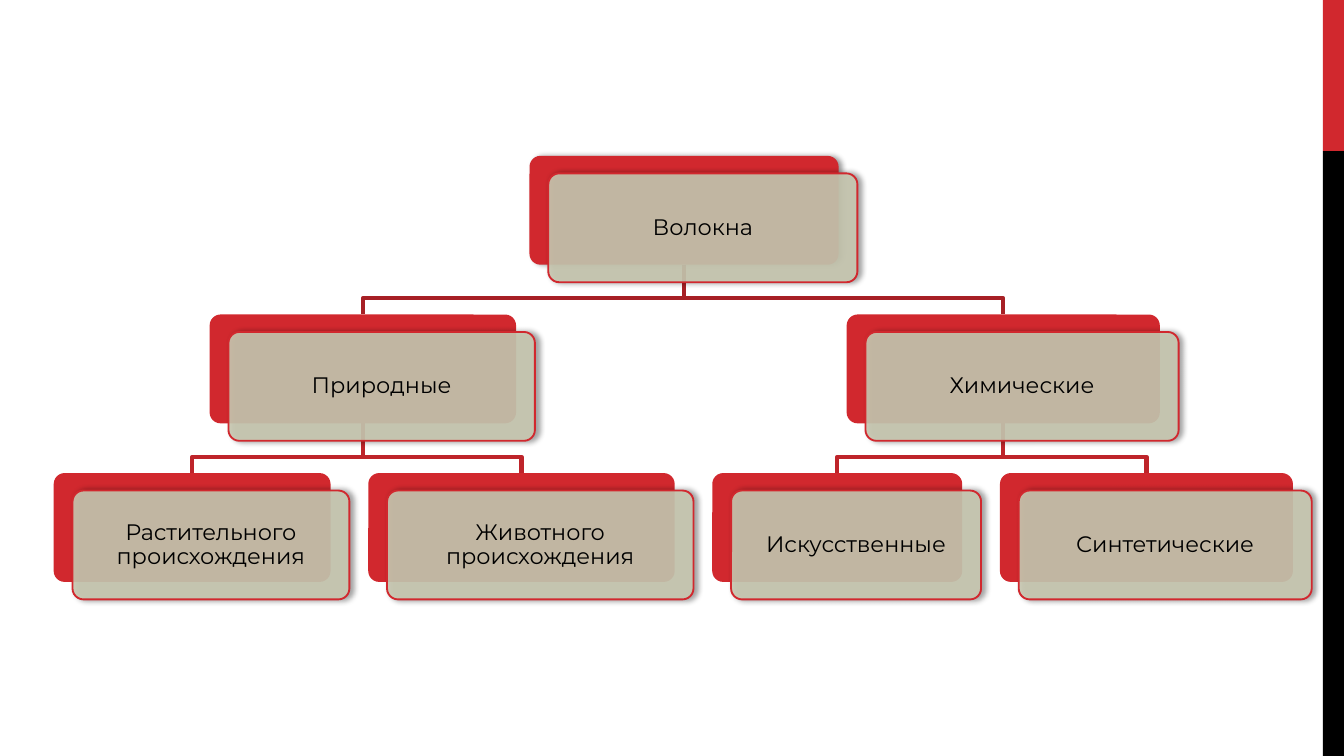
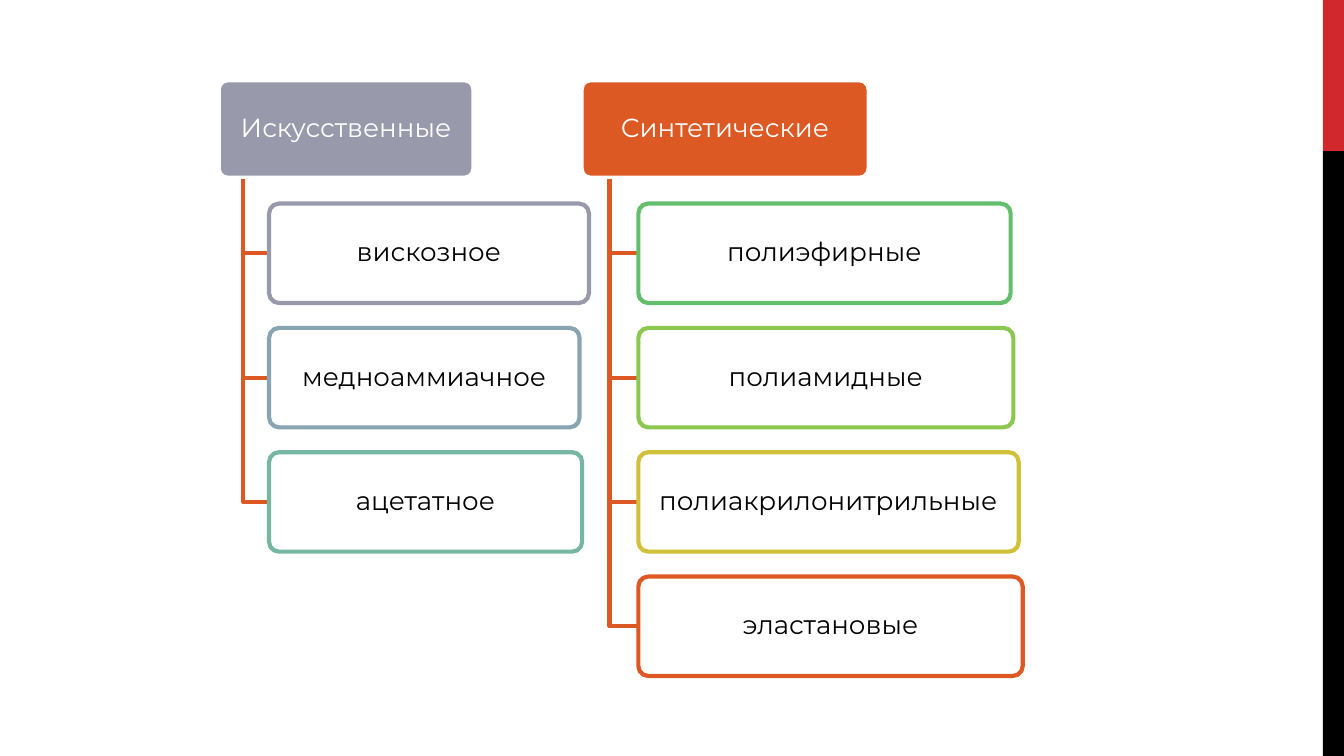
from dataclasses import dataclass

from lxml import etree
from pptx import Presentation
from pptx.dml.color import RGBColor
from pptx.enum.shapes import MSO_SHAPE
from pptx.enum.text import MSO_ANCHOR, PP_ALIGN
from pptx.oxml import parse_xml
from pptx.oxml.ns import nsdecls, qn
from pptx.util import Inches, Pt

RECTANGLE = MSO_SHAPE.RECTANGLE
ROUNDED = MSO_SHAPE.ROUNDED_RECTANGLE
CENTER = PP_ALIGN.CENTER
MIDDLE = MSO_ANCHOR.MIDDLE

SLIDE_WIDTH = 10
SLIDE_HEIGHT = SLIDE_WIDTH * 9 / 16
BLANK_LAYOUT = 6


@dataclass(frozen=True)
class Theme:
    font: str = "Montserrat"
    red: str = "D1282E"
    black: str = "000000"
    white: str = "FFFFFF"
    sand: str = "C8C8B1"
    orange: str = "DC5924"
    gray: str = "989AAC"
    tree_lines: tuple = ("A72025", "BE242A")
    tree_size: float = 12
    list_size: float = 14
    thin: float = 1
    medium: float = 2.25
    thick: float = 3.25
    opacity: int = 90


THEME = Theme()


@dataclass(frozen=True)
class Node:
    text: str
    left: float
    width: float
    children: tuple = ()

    @property
    def center(self):
        return self.left + self.width / 2


FIBER_TREE = Node("Волокна", 3.94, 2.3, (
    Node("Природные", 1.56, 2.28, (
        Node("Растительного происхождения", 0.4, 2.06),
        Node("Животного происхождения", 2.74, 2.28),
    )),
    Node("Химические", 6.3, 2.33, (
        Node("Искусственные", 5.3, 1.86),
        Node("Синтетические", 7.44, 2.18),
    )),
))
TREE_TOP, TREE_STEP, PLATE_HEIGHT = 1.16, 1.18, 0.81
CARD_SHIFT, CARD_DROP, BEND_GAP = 0.14, 0.13, 0.12

# Heading, left, width, colour, then items as (text, width, outline colour).
BRANCHES = (
    ("Искусственные", 1.62, 1.91, THEME.gray, (
        ("вискозное", 2.38, THEME.gray),
        ("медноаммиачное", 2.31, "88A5B1"),
        ("ацетатное", 2.33, "76B7A3"),
    )),
    ("Синтетические", 4.32, 2.15, THEME.orange, (
        ("полиэфирные", 2.77, "63BF6C"),
        ("полиамидные", 2.79, "8CC74F"),
        ("полиакрилонитрильные", 2.83, "D1C03A"),
        ("эластановые", 2.86, THEME.orange),
    )),
)
LIST_TOP, ITEM_HEIGHT = 0.59, 0.74
ITEM_STEP = ITEM_HEIGHT * 1.25


def rgb(color):
    return RGBColor.from_string(color)


def add_box(page, kind, left, top, width, height, fill, line=None, line_width=1,
            opacity=100):
    box = page.shapes.add_shape(
        kind, Inches(left), Inches(top), Inches(width), Inches(height))
    box.shadow.inherit = False
    box.fill.solid()
    box.fill.fore_color.rgb = rgb(fill)
    if opacity < 100:
        color = box.element.spPr.find(qn("a:solidFill"))[0]
        etree.SubElement(color, qn("a:alpha"), val=str(opacity * 1000))
    if line:
        box.line.color.rgb = rgb(line)
        box.line.width = Pt(line_width)
    else:
        box.line.fill.background()
    if kind == ROUNDED:
        box.adjustments[0] = 0.1
    return box


def add_shadow(box):
    effects = box.element.spPr.find(qn("a:effectLst"))
    effects.append(parse_xml(
        f'<a:outerShdw {nsdecls("a")} blurRad="{Pt(3.1)}" dist="{Pt(1.8)}" dir="0">'
        f'<a:srgbClr val="{THEME.black}"><a:alpha val="40000"/></a:srgbClr>'
        '</a:outerShdw>'))


def write_label(box, text, size, color, side, edge):
    """Centre text in the box with the given side and top/bottom insets."""
    frame = box.text_frame
    frame_format = {
        "word_wrap": True,
        "vertical_anchor": MIDDLE,
        "margin_left": Inches(side),
        "margin_right": Inches(side),
        "margin_top": Inches(edge),
        "margin_bottom": Inches(edge),
    }
    for name, value in frame_format.items():
        setattr(frame, name, value)
    para = frame.paragraphs[0]
    para.alignment = CENTER
    para.line_spacing = 0.9
    span = para.add_run()
    span.text = text
    for name, value in {"name": THEME.font, "size": Pt(size)}.items():
        setattr(span.font, name, value)
    span.font.color.rgb = rgb(color)


def add_polyline(page, points, color):
    start, *rest = [(Inches(x), Inches(y)) for x, y in points]
    builder = page.shapes.build_freeform(*start)
    builder.add_line_segments(rest, close=False)
    polyline = builder.convert_to_shape()
    polyline.shadow.inherit = False
    polyline.fill.background()
    polyline.line.color.rgb = rgb(color)
    polyline.line.width = Pt(THEME.medium)


def add_page(deck):
    """Add a blank page with the red and black band on its right edge."""
    page = deck.slides.add_slide(deck.slide_layouts[BLANK_LAYOUT])
    width = SLIDE_WIDTH / 64
    left, split = SLIDE_WIDTH - width, SLIDE_HEIGHT / 5
    add_box(page, RECTANGLE, left, 0, width, split, THEME.red)
    add_box(page, RECTANGLE, left, split, width, SLIDE_HEIGHT - split, THEME.black)
    return page


def add_tree_lines(page, node, level=0):
    bottom = TREE_TOP + level * TREE_STEP + PLATE_HEIGHT
    child_top = TREE_TOP + (level + 1) * TREE_STEP
    bend = child_top - BEND_GAP
    for child in node.children:
        add_tree_lines(page, child, level + 1)
        points = ((node.center, bottom), (node.center, bend),
                  (child.center, bend), (child.center, child_top))
        add_polyline(page, points, THEME.tree_lines[level])


def add_tree_cards(page, node, level=0):
    top = TREE_TOP + level * TREE_STEP
    plate = add_box(page, ROUNDED, node.left, top, node.width, PLATE_HEIGHT, THEME.red)
    if level == 0:
        add_shadow(plate)
    card = add_box(page, ROUNDED, node.left + CARD_SHIFT, top + CARD_DROP,
                   node.width, PLATE_HEIGHT, THEME.sand, THEME.red, THEME.thin,
                   THEME.opacity)
    add_shadow(card)
    write_label(card, node.text, THEME.tree_size, THEME.black, 0.05, 0.05)
    for child in node.children:
        add_tree_cards(page, child, level + 1)


def add_branch(page, heading, left, width, color, items):
    """Draw a heading with its items hanging from a rail below it."""
    header = add_box(page, ROUNDED, left, LIST_TOP, width, ITEM_HEIGHT, color,
                     THEME.white, THEME.thick)
    write_label(header, heading, THEME.list_size, THEME.white, 0.03, 0.02)
    rail, item_left = left + width * 0.1, left + width * 0.2
    for index, (text, item_width, outline) in enumerate(items, start=1):
        top = LIST_TOP + index * ITEM_STEP
        middle = top + ITEM_HEIGHT / 2
        points = ((rail, LIST_TOP + ITEM_HEIGHT), (rail, middle), (item_left, middle))
        add_polyline(page, points, THEME.orange)
        item = add_box(page, ROUNDED, item_left, top, item_width, ITEM_HEIGHT,
                       THEME.white, outline, THEME.medium, THEME.opacity)
        write_label(item, text, THEME.list_size, THEME.black, 0.03, 0.02)


def main():
    deck = Presentation()
    deck.slide_width = Inches(SLIDE_WIDTH)
    deck.slide_height = Inches(SLIDE_HEIGHT)

    tree_page = add_page(deck)
    add_tree_lines(tree_page, FIBER_TREE)
    add_tree_cards(tree_page, FIBER_TREE)

    list_page = add_page(deck)
    for branch in BRANCHES:
        add_branch(list_page, *branch)

    deck.save("out.pptx")


if __name__ == "__main__":
    main()
